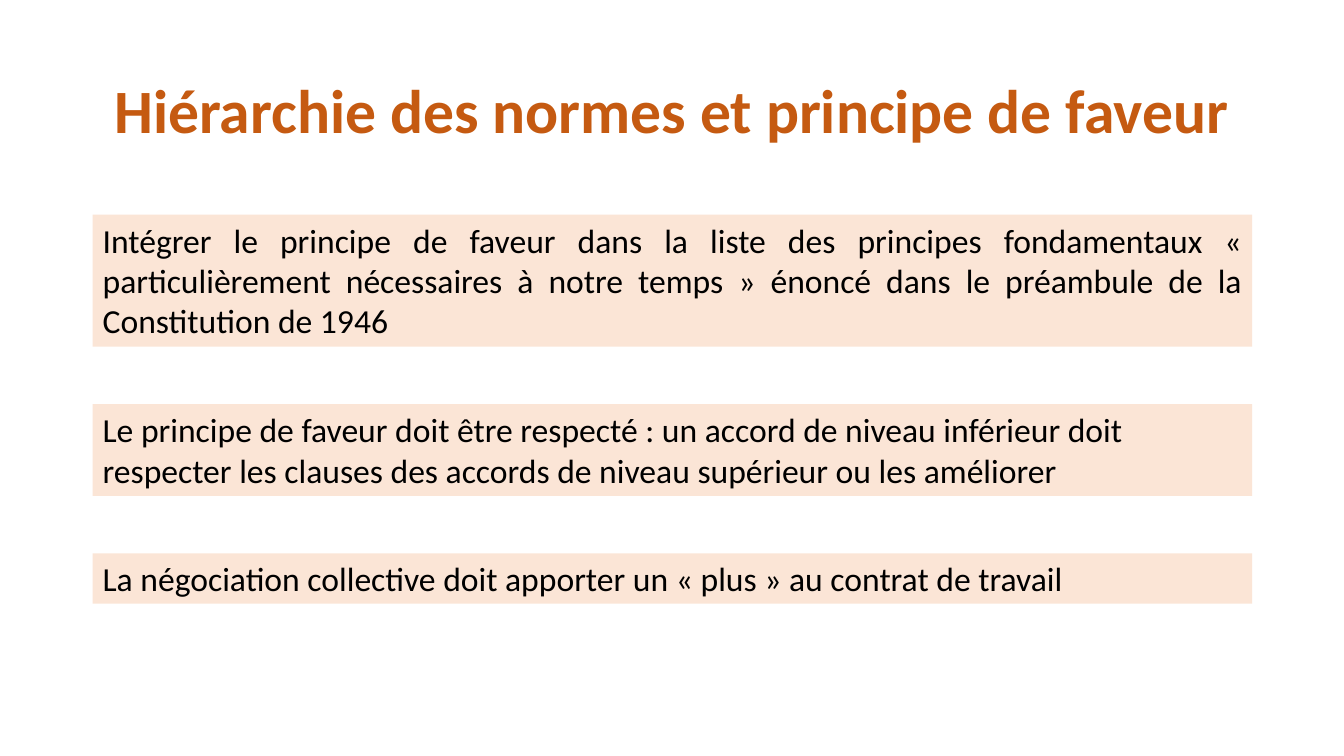
from pptx import Presentation
from pptx.dml.color import RGBColor
from pptx.enum.shapes import MSO_SHAPE
from pptx.enum.text import MSO_ANCHOR, MSO_AUTO_SIZE, PP_ALIGN
from pptx.util import Inches, Pt

COLORS = {"title": "C55A11", "panel": "FBE5D6", "text": "000000"}
FONT = "Calibri"

# Shared column and vertical rhythm, in inches
LEFT, WIDTH = 0.92, 11.5
FIRST_TOP, GAP = 2.13, 0.57

# Statement, height, alignment
STATEMENTS = [
    ("Intégrer le principe de faveur dans la liste des principes fondamentaux "
     "« particulièrement nécessaires à notre temps » énoncé dans le préambule "
     "de la Constitution de 1946", 1.31, PP_ALIGN.JUSTIFY),
    ("Le principe de faveur doit être respecté : un accord de niveau inférieur "
     "doit respecter les clauses des accords de niveau supérieur ou les "
     "améliorer", 0.91, PP_ALIGN.LEFT),
    ("La négociation collective doit apporter un « plus » au contrat de "
     "travail", 0.5, PP_ALIGN.LEFT),
]


def write(frame, text, size, color, align, bold=False):
    frame.word_wrap = True
    frame.text = text
    paragraph = frame.paragraphs[0]
    paragraph.alignment = align
    font = paragraph.runs[0].font
    font.name, font.size, font.bold = FONT, Pt(size), bold
    font.color.rgb = RGBColor.from_string(COLORS[color])


def add_title(slide, text):
    heading = slide.shapes.add_textbox(
        Inches(LEFT), Inches(0.4), Inches(WIDTH), Inches(1.45))
    frame = heading.text_frame
    write(frame, text, 44, "title", PP_ALIGN.CENTER, bold=True)
    frame.vertical_anchor = MSO_ANCHOR.MIDDLE
    frame.paragraphs[0].line_spacing = 0.9


def add_statement(slide, text, top, height, align):
    panel = slide.shapes.add_shape(
        MSO_SHAPE.RECTANGLE,
        Inches(LEFT), Inches(top), Inches(WIDTH), Inches(height))
    panel.shadow.inherit = False
    panel.fill.solid()
    panel.fill.fore_color.rgb = RGBColor.from_string(COLORS["panel"])
    panel.line.fill.background()
    frame = panel.text_frame
    write(frame, text, 24, "text", align)
    frame.vertical_anchor = MSO_ANCHOR.TOP
    frame.auto_size = MSO_AUTO_SIZE.SHAPE_TO_FIT_TEXT


def main():
    deck = Presentation()
    deck.slide_width, deck.slide_height = Inches(13.33), Inches(7.5)
    slide = deck.slides.add_slide(deck.slide_layouts[6])

    # Heading
    add_title(slide, "Hiérarchie des normes et principe de faveur")

    # Statements stacked with equal gaps
    top = FIRST_TOP
    for text, height, align in STATEMENTS:
        add_statement(slide, text, top, height, align)
        top += height + GAP

    deck.save("out.pptx")


if __name__ == "__main__":
    main()
